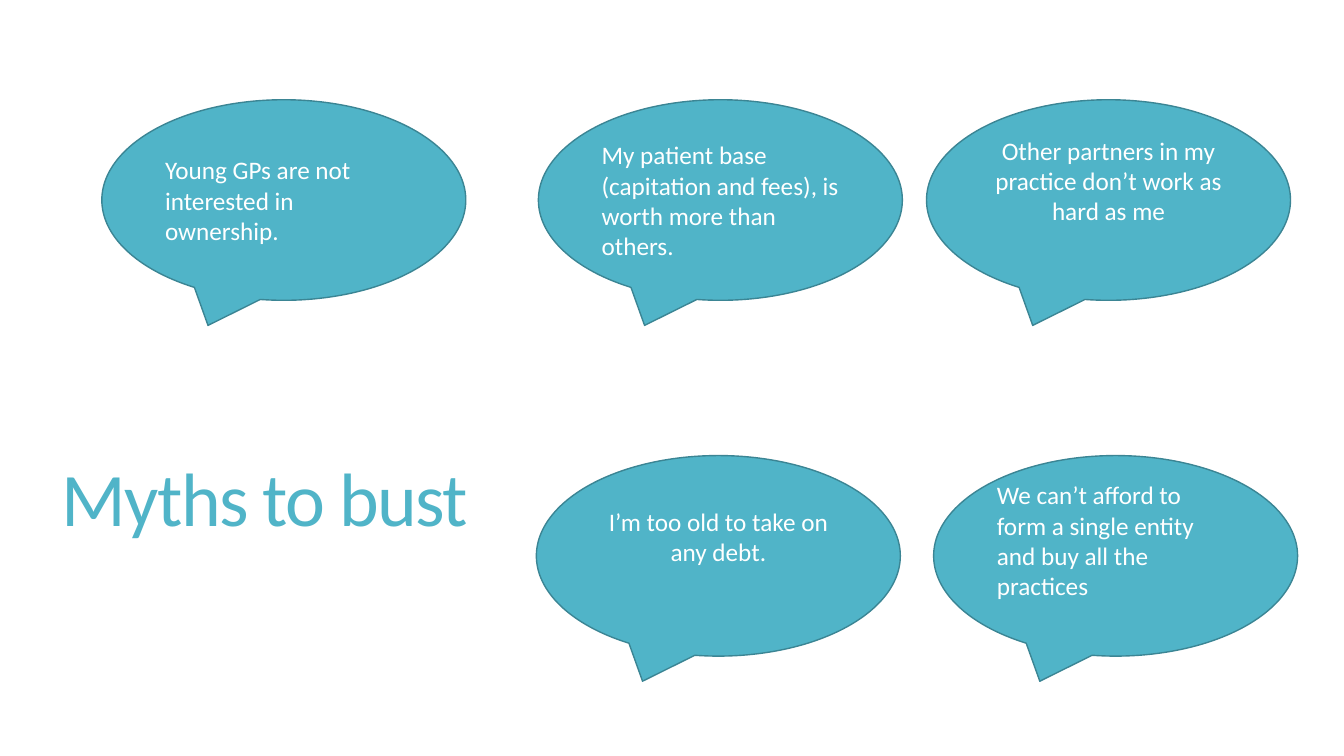
"""Build the "Myths to bust" slide with its five speech bubbles."""
from dataclasses import dataclass

from pptx import Presentation
from pptx.dml.color import RGBColor
from pptx.enum.shapes import MSO_SHAPE
from pptx.enum.text import MSO_ANCHOR, PP_ALIGN
from pptx.text.text import TextFrame
from pptx.util import Emu, Inches, Pt

BUBBLE_SHAPE = MSO_SHAPE.OVAL_CALLOUT
MIDDLE = MSO_ANCHOR.MIDDLE
LEFT, CENTER, RIGHT = PP_ALIGN.LEFT, PP_ALIGN.CENTER, PP_ALIGN.RIGHT

SLIDE_WIDTH, SLIDE_HEIGHT = Inches(13.33), Inches(7.5)
TITLE_LAYOUT = 5
TOP_ROW, BOTTOM_ROW = 13.2, 60.27
BUBBLE_WIDTH, BUBBLE_HEIGHT = 27.08, 26.53


@dataclass(frozen=True)
class Theme:
    font: str = "Calibri"
    accent: RGBColor = RGBColor(0x50, 0xB4, 0xC8)
    outline: RGBColor = RGBColor(0x3B, 0x85, 0x94)
    bubble_text: RGBColor = RGBColor(0xFF, 0xFF, 0xFF)
    title_size: float = 54
    bubble_size: float = 18
    outline_width: float = 1


@dataclass(frozen=True)
class Area:
    """Position and size in percent of the slide."""
    left: float
    top: float
    width: float
    height: float

    def place(self, shape) -> None:
        shape.left = Emu(int(SLIDE_WIDTH * self.left / 100))
        shape.top = Emu(int(SLIDE_HEIGHT * self.top / 100))
        shape.width = Emu(int(SLIDE_WIDTH * self.width / 100))
        shape.height = Emu(int(SLIDE_HEIGHT * self.height / 100))


@dataclass(frozen=True)
class Bubble:
    text: str
    left: float
    top: float
    alignment: PP_ALIGN = LEFT
    bottom_inset: float = 0.05


THEME = Theme()
TITLE_AREA = Area(3.53, 47.2, 32.03, 38.67)
BUBBLES = (
    Bubble("Other partners in my practice don’t work as hard as me",
           68.94, TOP_ROW, CENTER, 0.44),
    Bubble("My patient base (capitation and fees), is worth more than others.",
           40.06, TOP_ROW),
    Bubble("I’m too old to take on any debt.", 39.91, BOTTOM_ROW, CENTER, 0.44),
    Bubble("We can’t afford to form a single entity and buy all the practices",
           69.47, BOTTOM_ROW, bottom_inset=0.36),
    Bubble("Young GPs are not interested in ownership.", 7.58, TOP_ROW),
)


def write_text(frame: TextFrame, text: str, *, size: float, color: RGBColor,
               alignment: PP_ALIGN, line_spacing: float = 1.0,
               letter_spacing: float = 0, bottom_inset: float = 0.05) -> None:
    frame.word_wrap = True
    frame.vertical_anchor = MIDDLE
    frame.margin_bottom = Inches(bottom_inset)
    paragraph = frame.paragraphs[0]
    paragraph.alignment = alignment
    paragraph.line_spacing = line_spacing
    run = paragraph.add_run()
    run.text = text
    run.font.name = THEME.font
    run.font.size = Pt(size)
    run.font.color.rgb = color
    if letter_spacing:
        run._r.get_or_add_rPr().set("spc", str(round(letter_spacing * 100)))


def draw_bubble(slide, bubble: Bubble) -> None:
    shape = slide.shapes.add_shape(BUBBLE_SHAPE, 0, 0, 0, 0)
    Area(bubble.left, bubble.top, BUBBLE_WIDTH, BUBBLE_HEIGHT).place(shape)
    shape.shadow.inherit = False
    shape.fill.solid()
    shape.fill.fore_color.rgb = THEME.accent
    shape.line.color.rgb = THEME.outline
    shape.line.width = Pt(THEME.outline_width)
    write_text(shape.text_frame, bubble.text, size=THEME.bubble_size,
               color=THEME.bubble_text, alignment=bubble.alignment,
               bottom_inset=bubble.bottom_inset)


def main() -> None:
    presentation = Presentation()
    presentation.slide_width, presentation.slide_height = SLIDE_WIDTH, SLIDE_HEIGHT
    slide = presentation.slides.add_slide(presentation.slide_layouts[TITLE_LAYOUT])
    title = slide.shapes.title
    TITLE_AREA.place(title)
    write_text(title.text_frame, "Myths to bust", size=THEME.title_size,
               color=THEME.accent, alignment=RIGHT, line_spacing=0.85,
               letter_spacing=-1.2)
    for bubble in BUBBLES:
        draw_bubble(slide, bubble)
    presentation.save("out.pptx")


if __name__ == "__main__":
    main()
